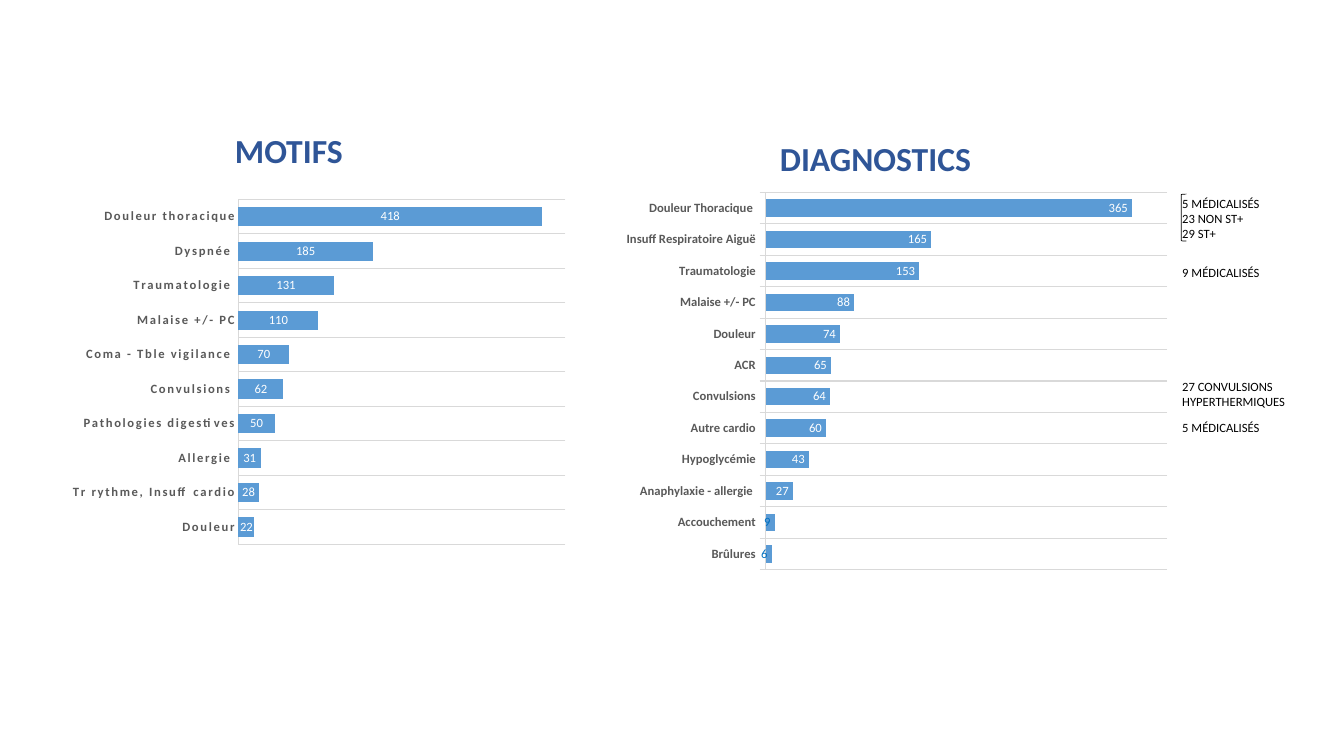
from lxml import etree
from pptx import Presentation
from pptx.chart.data import CategoryChartData
from pptx.dml.color import RGBColor
from pptx.enum.chart import XL_CHART_TYPE, XL_LABEL_POSITION, XL_TICK_MARK
from pptx.enum.shapes import MSO_SHAPE
from pptx.enum.text import MSO_AUTO_SIZE, PP_ALIGN
from pptx.oxml.ns import qn
from pptx.util import Pt

CLUSTERED, STACKED = XL_CHART_TYPE.BAR_CLUSTERED, XL_CHART_TYPE.BAR_STACKED
CENTERED, INSIDE_END = XL_LABEL_POSITION.CENTER, XL_LABEL_POSITION.INSIDE_END
TICK_NONE, TICK_OUT = XL_TICK_MARK.NONE, XL_TICK_MARK.OUTSIDE
LEFT_BRACKET = MSO_SHAPE.LEFT_BRACKET
FIT_TEXT = MSO_AUTO_SIZE.SHAPE_TO_FIT_TEXT
LEFT, CENTER = PP_ALIGN.LEFT, PP_ALIGN.CENTER

BLACK = RGBColor(0x00, 0x00, 0x00)
WHITE = RGBColor(0xFF, 0xFF, 0xFF)
NAVY = RGBColor(0x2F, 0x55, 0x97)
BAR_BLUE = RGBColor(0x5B, 0x9B, 0xD5)
LABEL_BLUE = RGBColor(0x00, 0x70, 0xC0)
AXIS_GRAY = RGBColor(0x59, 0x59, 0x59)
GRID_GRAY = RGBColor(0xD9, 0xD9, 0xD9)

MOTIFS = {
    "Douleur": 22,
    "Tr rythme, Insuff cardio": 28,
    "Allergie ": 31,
    "Pathologies digestives": 50,
    "Convulsions ": 62,
    "Coma - Tble vigilance ": 70,
    "Malaise +/- PC": 110,
    "Traumatologie ": 131,
    "Dyspnée ": 185,
    "Douleur thoracique": 418,
}
DIAGNOSTICS = {
    "Brûlures": 6,
    "Accouchement": 9,
    "Anaphylaxie - allergie ": 27,
    "Hypoglycémie": 43,
    "Autre cardio": 60,
    "Convulsions": 64,
    "ACR": 65,
    "Douleur": 74,
    "Malaise +/- PC": 88,
    "Traumatologie": 153,
    "Insuff Respiratoire Aiguë": 165,
    "Douleur Thoracique ": 365,
}
NOTE_LEFT, NOTE_WIDTH = 837.4, 119.5
NOTES = [
    (185.8, 18, ["9 MÉDICALISÉS"]),
    (267.1, 29, ["27 CONVULSIONS HYPERTHERMIQUES"]),
    (136.1, 40, ["5 MÉDICALISÉS", "23 NON ST+", "29 ST+"]),
    (296.6, 18, ["5 MÉDICALISÉS"]),
]


class ChartPage:
    font_name = "Calibri"
    small = 9

    def __init__(self, deck):
        self.page = deck.slides.add_slide(deck.slide_layouts[6])

    def style_font(self, font, size, color, bold=False):
        font.name = self.font_name
        font.size = Pt(size)
        font.color.rgb = color
        font.bold = bold

    def text(self, frame, lines, size, color, bold=False, align=LEFT):
        box = self.page.shapes.add_textbox(*map(Pt, frame))
        body = box.text_frame
        body.word_wrap = True
        body.auto_size = FIT_TEXT
        for index, line in enumerate(lines):
            para = body.add_paragraph() if index else body.paragraphs[0]
            para.alignment = align
            span = para.add_run()
            span.text = line
            self.style_font(span.font, size, color, bold)

    def heading(self, left, top, title):
        self.text((left, top, 320.4, 36), [title], 24, NAVY, True, CENTER)

    def bracket(self, frame):
        bracket = self.page.shapes.add_shape(LEFT_BRACKET, *map(Pt, frame))
        bracket.shadow.inherit = False
        bracket.fill.background()
        bracket.line.color.rgb = BLACK
        bracket.line.width = Pt(0.5)

    def bars(self, frame, kind, counts, maximum, gap, tick, position, plot_area, spacing=0):
        chart_data = CategoryChartData()
        chart_data.categories = list(counts)
        chart_data.add_series("Series 1", list(counts.values()))
        chart = self.page.shapes.add_chart(kind, *map(Pt, frame), chart_data).chart
        chart.has_title = False
        chart.has_legend = False
        self.style_font(chart.font, 10, BLACK)
        self.axes(chart, maximum, tick, spacing)
        self.place_plot(chart, plot_area)
        plot = chart.plots[0]
        plot.vary_by_categories = False
        plot.gap_width = gap
        series = plot.series[0]
        series.format.fill.solid()
        series.format.fill.fore_color.rgb = BAR_BLUE
        labels = series.data_labels
        labels.show_value = True
        labels.position = position
        self.style_font(labels.font, self.small, WHITE)
        return series

    def axes(self, chart, maximum, tick, spacing):
        values = chart.value_axis
        values.minimum_scale = 0
        values.maximum_scale = maximum
        values.has_major_gridlines = False
        values.visible = False
        names = chart.category_axis
        names.major_tick_mark = tick
        names.minor_tick_mark = TICK_NONE
        names.has_major_gridlines = True
        for line in (names.format.line, names.major_gridlines.format.line):
            line.color.rgb = GRID_GRAY
            line.width = Pt(0.75)
        self.style_font(names.tick_labels.font, self.small, AXIS_GRAY, True)
        if spacing:
            for properties in chart.element.iter(qn("c:catAx")):
                next(properties.iter(qn("a:defRPr"))).set("spc", str(spacing))

    def place_plot(self, chart, plot_area):
        area = next(chart.element.iter(qn("c:plotArea")))
        layout = area.find(qn("c:layout"))
        if layout is None:
            layout = etree.Element(qn("c:layout"))
            area.insert(0, layout)
        manual = etree.SubElement(layout, qn("c:manualLayout"))
        settings = [("layoutTarget", "inner"), ("xMode", "edge"), ("yMode", "edge")]
        for tag, value in settings + list(zip("xywh", plot_area)):
            etree.SubElement(manual, qn(f"c:{tag}")).set("val", str(value))

    def recolor_labels(self, series, indexes, color, position):
        for index in indexes:
            label = series.points[index].data_label
            self.style_font(label.font, self.small, color)
            label.position = position


def main():
    deck = Presentation()
    deck.slide_width, deck.slide_height = Pt(960), Pt(540)
    page = ChartPage(deck)
    diagnostics = page.bars((437.8, 131.8, 403.9, 280.8), CLUSTERED, DIAGNOSTICS, 400, 80,
                            TICK_OUT, INSIDE_END, (0.27, 0.02, 0.71, 0.96))
    page.recolor_labels(diagnostics, (0, 1), LABEL_BLUE, INSIDE_END)
    page.heading(46.1, 89.3, "MOTIFS")
    page.bars((31, 131.8, 376.6, 267.8), STACKED, MOTIFS, 450, 79,
              TICK_NONE, CENTERED, (0.37, 0.04, 0.62, 0.92), spacing=120)
    page.heading(465.1, 95, "DIAGNOSTICS")
    page.bracket((843.8, 138.7, 3.6, 33.5))
    for top, height, lines in NOTES:
        page.text((NOTE_LEFT, top, NOTE_WIDTH, height), lines, page.small, BLACK)
    deck.save("out.pptx")


if __name__ == "__main__":
    main()
